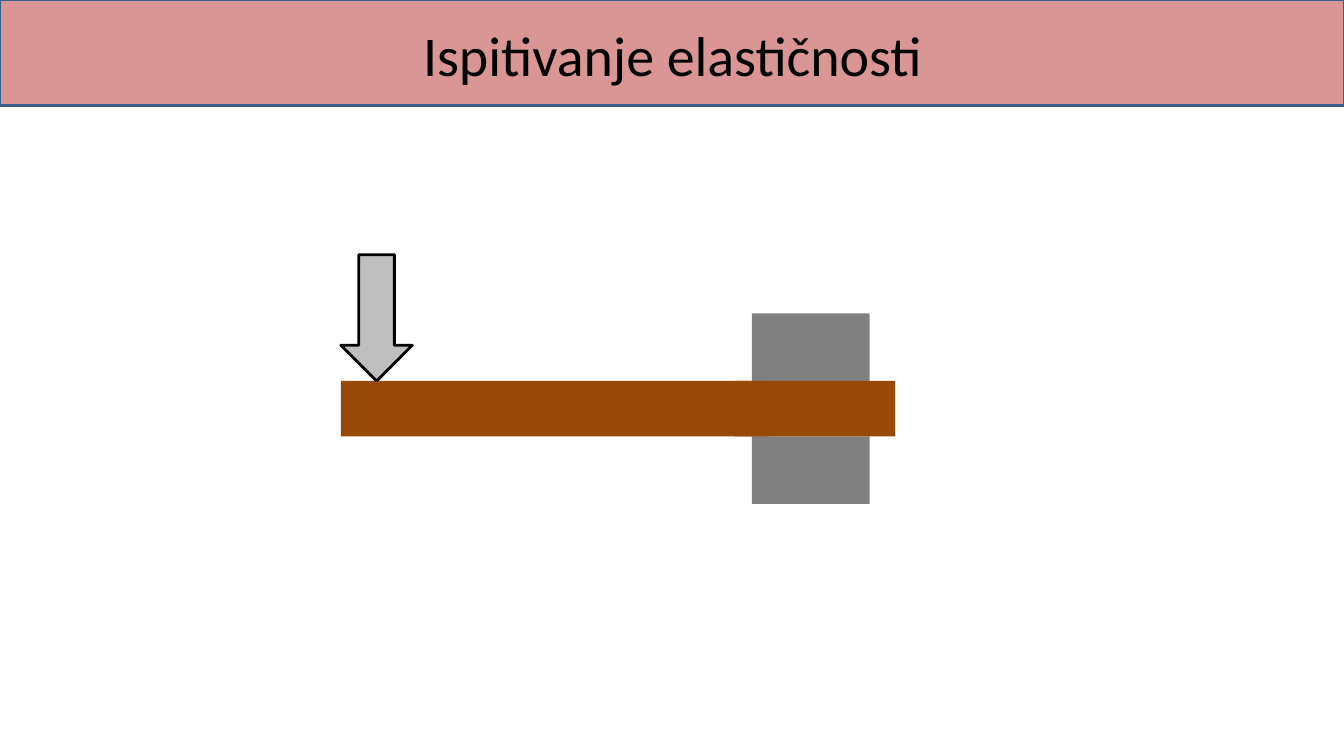
"""Build the slide about testing elasticity."""
from pptx import Presentation
from pptx.dml.color import RGBColor
from pptx.enum.shapes import MSO_SHAPE
from pptx.enum.text import MSO_ANCHOR, MSO_AUTO_SIZE, PP_ALIGN
from pptx.util import Cm, Pt

COLORS = {
    "banner": "D99694",
    "banner_edge": "3A5F8C",
    "beam": "984807",
    "clamp": "808080",
    "force": "BFBFBF",
    "black": "000000",
}
SLIDE_W, SLIDE_H = 33.87, 19.05
BEAM_TOP, BEAM_H = 9.6, 1.4
BEAM_LEFT, CLAMP_LEFT = 8.59, 18.95
CLAMP_W, CLAMP_H = 2.97, 1.7
FORCE_LENGTH, FORCE_W = 3.18, 1.8


def rgb(name):
    """Return the named colour."""
    return RGBColor.from_string(COLORS[name])


def add_block(s, left, top, width, height, fill, line=None, kind=MSO_SHAPE.RECTANGLE):
    """Add a filled preset shape, outlined if a line colour is given."""
    sp = s.shapes.add_shape(kind, Cm(left), Cm(top), Cm(width), Cm(height))
    sp.shadow.inherit = False
    sp.fill.solid()
    sp.fill.fore_color.rgb = rgb(fill)
    if line:
        sp.line.color.rgb = rgb(line)
        sp.line.width = Pt(2)
    else:
        sp.line.fill.background()
    return sp


def write_text(sp, text, size=40, font="Calibri", color="black", align=PP_ALIGN.CENTER):
    """Write one formatted paragraph, centred vertically in its shape."""
    tf = sp.text_frame
    tf.word_wrap = True
    tf.auto_size = MSO_AUTO_SIZE.NONE
    tf.vertical_anchor = MSO_ANCHOR.MIDDLE
    p = tf.paragraphs[0]
    p.alignment = align
    r = p.add_run()
    r.text = text
    r.font.size = Pt(size)
    r.font.name = font
    r.font.color.rgb = rgb(color)


def add_title(s, text):
    """Place the title placeholder on top of the coloured banner."""
    add_block(s, 0, 0, SLIDE_W, 2.67, "banner", "banner_edge")
    title = s.shapes.title
    title.left, title.top, title.width, title.height = Cm(2.34), Cm(0), Cm(29.21), Cm(2.72)
    write_text(title, text)
    s.shapes._spTree.append(title._element)


def add_clamped_beam(s):
    """Draw the beam held between two clamp jaws."""
    add_block(s, BEAM_LEFT, BEAM_TOP, CLAMP_LEFT - BEAM_LEFT, BEAM_H, "beam")
    for top in (BEAM_TOP + BEAM_H, BEAM_TOP - CLAMP_H):
        add_block(s, CLAMP_LEFT, top, CLAMP_W, CLAMP_H, "clamp")
    for left, width in ((CLAMP_LEFT, 3.61), (18.52, 0.86)):
        add_block(s, left, BEAM_TOP, width, BEAM_H, "beam")


def add_force(s):
    """Draw the arrow that presses down on the free end of the beam."""
    left = BEAM_LEFT + (FORCE_W - FORCE_LENGTH) / 2
    top = BEAM_TOP - (FORCE_LENGTH + FORCE_W) / 2
    sp = add_block(s, left, top, FORCE_LENGTH, FORCE_W, "force", "black", MSO_SHAPE.LEFT_ARROW)
    sp.rotation = 270


def main():
    """Create and save the presentation."""
    prs = Presentation()
    prs.slide_width, prs.slide_height = Cm(SLIDE_W), Cm(SLIDE_H)
    s = prs.slides.add_slide(prs.slide_layouts[5])
    add_title(s, "Ispitivanje elastičnosti")
    add_clamped_beam(s)
    add_force(s)
    prs.save("out.pptx")


if __name__ == "__main__":
    main()
